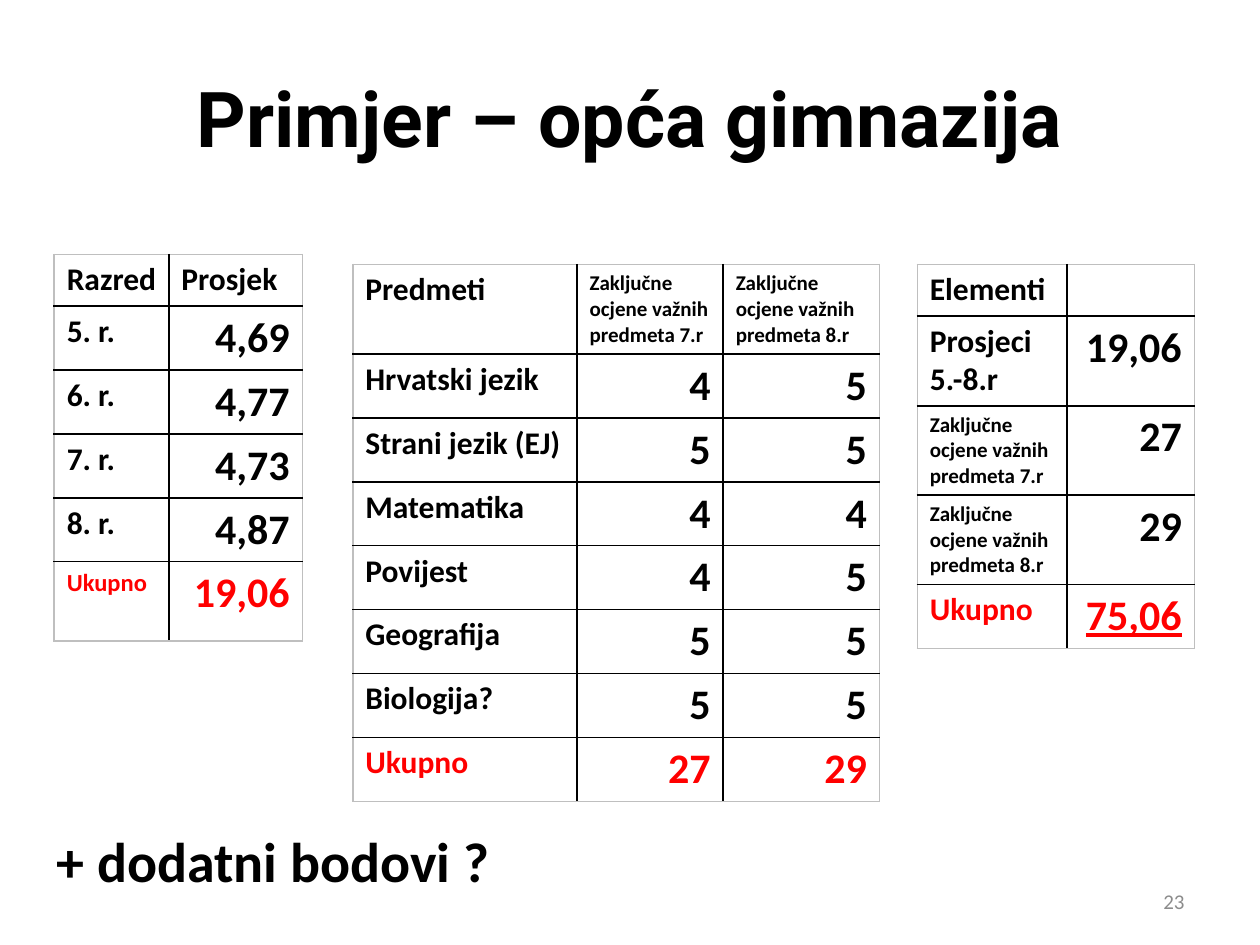
from lxml.etree import SubElement
from pptx import Presentation
from pptx.dml.color import RGBColor
from pptx.enum.text import MSO_ANCHOR, MSO_AUTO_SIZE, PP_ALIGN
from pptx.oxml.ns import qn
from pptx.util import Inches, Pt

BLACK = RGBColor(0x00, 0x00, 0x00)
RED = RGBColor(0xFF, 0x00, 0x00)
GREY = RGBColor(0x8C, 0x8C, 0x8C)
FRAME = RGBColor(0xBF, 0xBF, 0xBF)

GRADES_7 = "Zaključne ocjene važnih predmeta 7.r"
GRADES_8 = "Zaključne ocjene važnih predmeta 8.r"
LABEL = {"size": Pt(18)}
SMALL = {"size": Pt(12)}
VALUE = {"size": Pt(24)}

AVERAGES = [
    ["Razred", "Prosjek"],
    ["5. r.", "4,69"],
    ["6. r.", "4,77"],
    ["7. r.", "4,73"],
    ["8. r.", "4,87"],
    ["Ukupno", "19,06"],
]
SUBJECTS = [
    ["Predmeti", GRADES_7, GRADES_8],
    ["Hrvatski jezik", "4", "5"],
    ["Strani jezik (EJ)", "5", "5"],
    ["Matematika", "4", "4"],
    ["Povijest", "4", "5"],
    ["Geografija", "5", "5"],
    ["Biologija?", "5", "5"],
    ["Ukupno", "27", "29"],
]
ELEMENTS = [
    ["Elementi", ""],
    ["Prosjeci 5.-8.r", "19,06"],
    [GRADES_7, "27"],
    [GRADES_8, "29"],
    ["Ukupno", "75,06"],
]


def write(frame, text, align=PP_ALIGN.LEFT, color=BLACK, **formats):
    para = frame.paragraphs[0]
    para.alignment = align
    span = para.add_run()
    span.text = text
    formats = {"name": "Calibri", "bold": True} | formats
    for key, value in formats.items():
        setattr(span.font, key, value)
    span.font.color.rgb = color


def set_borders(cell, colors):
    """Draw the four cell edges; they must precede the fill in tcPr."""
    properties = cell._tc.get_or_add_tcPr()
    for index, (side, color) in enumerate(colors.items()):
        line = SubElement(properties, qn(f"a:ln{side}"), w=str(Pt(1)))
        fill = SubElement(line, qn("a:solidFill"))
        SubElement(fill, qn("a:srgbClr"), val=str(color))
        properties.insert(index, line)


def add_grid(slide, left, top, widths, heights, rows, special=None):
    """Place a table; special maps (row, column) to extra font formats."""
    special = special or {}
    last_row, last_column = len(rows) - 1, len(widths) - 1
    table = slide.shapes.add_table(
        len(rows), len(widths), Inches(left), Inches(top),
        Inches(sum(widths)), Inches(sum(heights))).table
    table.first_row = table.horz_banding = False
    for column, width in zip(table.columns, widths):
        column.width = Inches(width)
    for row, height in zip(table.rows, heights):
        row.height = Inches(height)

    for r, texts in enumerate(rows):
        for c, text in enumerate(texts):
            cell = table.cell(r, c)
            cell.fill.background()
            set_borders(cell, {
                "L": FRAME if c == 0 else BLACK,
                "R": FRAME if c == last_column else BLACK,
                "T": FRAME if r == 0 else BLACK,
                "B": FRAME if r == last_row else BLACK,
            })
            if not text:
                continue
            is_value = r > 0 and c > 0
            formats = VALUE if is_value else SMALL if text in (GRADES_7, GRADES_8) else LABEL
            write(cell.text_frame, text,
                  PP_ALIGN.RIGHT if is_value else PP_ALIGN.LEFT,
                  RED if r == last_row else BLACK,
                  **(formats | special.get((r, c), {})))


def add_title(slide, left, top, width, height):
    title = slide.shapes.title
    box = {"left": left, "top": top, "width": width, "height": height}
    for key, value in box.items():
        setattr(title, key, Inches(value))
    title.text_frame.vertical_anchor = MSO_ANCHOR.MIDDLE
    write(title.text_frame, "Primjer – opća gimnazija", PP_ALIGN.CENTER,
          name="Roboto", size=Pt(44))


def add_text(slide, left, top, width, height, text, frame_formats, **formats):
    box = slide.shapes.add_textbox(*map(Inches, (left, top, width, height)))
    for key, value in ({"word_wrap": True} | frame_formats).items():
        setattr(box.text_frame, key, value)
    write(box.text_frame, text, **formats)


def main():
    deck = Presentation()
    deck.slide_width, deck.slide_height = Inches(10), Inches(7.5)
    slide = deck.slides.add_slide(deck.slide_layouts[5])
    add_title(slide, 0.5, 0.3, 9, 1.25)

    # Class averages, subject grades and the final sum
    add_grid(slide, 0.43, 2.02, [0.91, 1.06], [0.41] + [0.5] * 4 + [0.63],
             AVERAGES, {(5, 0): {"size": Pt(14)}})
    add_grid(slide, 2.8, 2.1, [1.78, 1.16, 1.24], [0.7] + [0.5] * 7, SUBJECTS)
    add_grid(slide, 7.28, 2.1, [1.19, 1.01], [0.41] + [0.7] * 3 + [0.5],
             ELEMENTS, {(4, 1): {"underline": True}})

    # Slide number and closing remark
    add_text(slide, 7.17, 6.95, 2.33, 0.4, "23",
             {"vertical_anchor": MSO_ANCHOR.MIDDLE},
             align=PP_ALIGN.RIGHT, color=GREY, size=Pt(12), bold=False)
    add_text(slide, 0.35, 6.51, 5.35, 0.64, "+ dodatni bodovi ?",
             {"auto_size": MSO_AUTO_SIZE.SHAPE_TO_FIT_TEXT}, size=Pt(32))
    deck.save("out.pptx")


if __name__ == "__main__":
    main()
